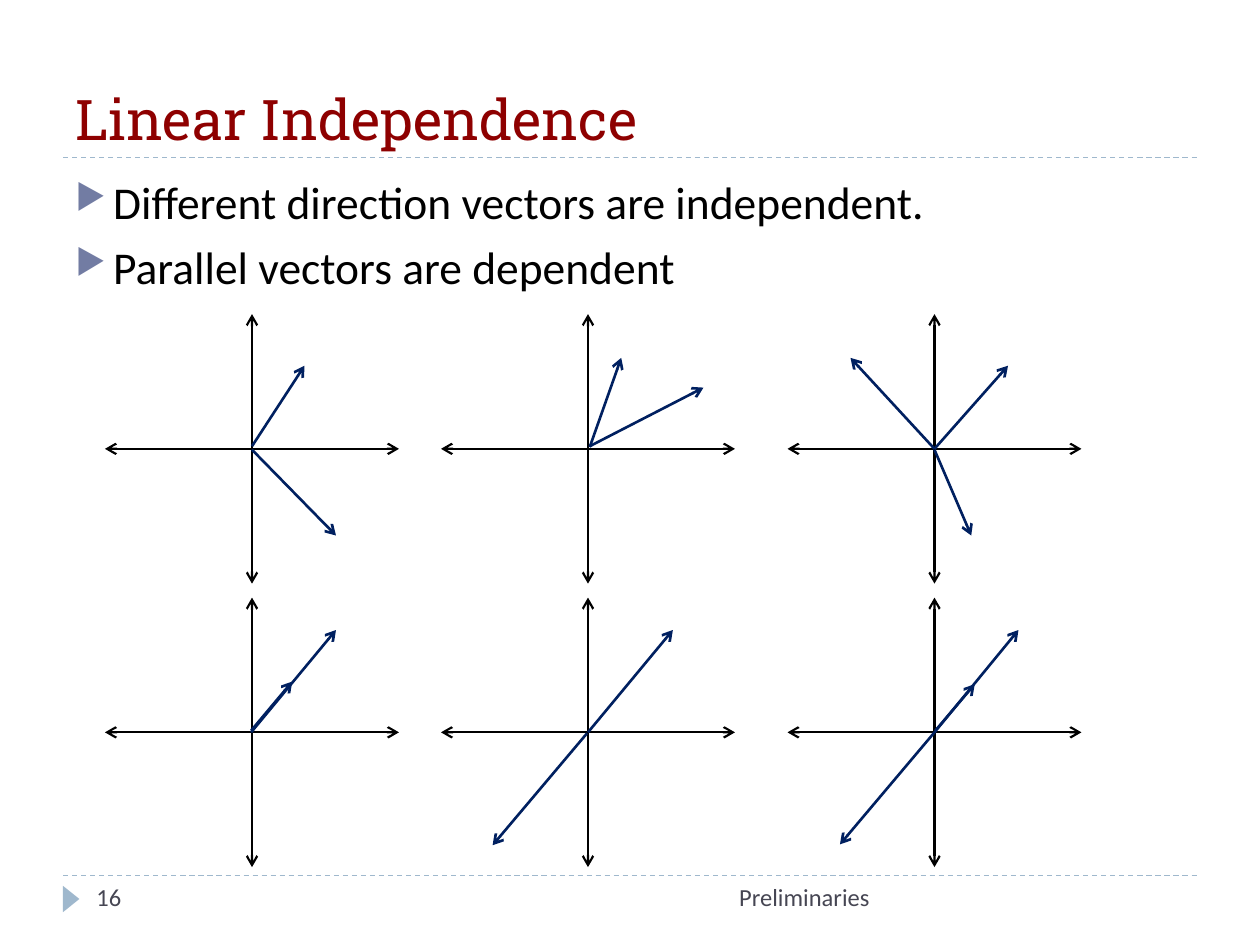
from lxml import etree
from pptx import Presentation
from pptx.dml.color import RGBColor
from pptx.enum.dml import MSO_LINE
from pptx.enum.shapes import MSO_CONNECTOR, MSO_SHAPE
from pptx.enum.text import MSO_ANCHOR, PP_ALIGN
from pptx.oxml.ns import qn
from pptx.util import Pt

STRAIGHT = MSO_CONNECTOR.STRAIGHT
TRIANGLE = MSO_SHAPE.ISOSCELES_TRIANGLE
DASH = MSO_LINE.DASH
TOP, BOTTOM = MSO_ANCHOR.TOP, MSO_ANCHOR.BOTTOM
LEFT, RIGHT = PP_ALIGN.LEFT, PP_ALIGN.RIGHT

# Content
TITLE = "Linear Independence"
POINTS = [
    "Different direction vectors are independent.",
    "Parallel vectors are dependent",
]
FOOTER = "Preliminaries"
PAGE_NUMBER = "16"

# Vectors per plot, as (start, end) offsets from the plot's origin
INDEPENDENT = [
    [((0, -1.5), (30, -47.5)), ((0, 0.5), (48, 49.5))],
    [((1, -1), (19, -52)), ((1, -1.5), (66, -35))],
    [((0, 0), (-48, -52)), ((0, 0), (42, -47.5)), ((0, 0.5), (21, 49.5))],
]
DEPENDENT = [
    [((-0.5, -1), (23, -29)), ((-0.5, 0), (48, -58.5))],
    [((0, 0), (48.5, -58.5)), ((-0.5, 0.5), (-54.5, 64.5))],
    [((0, 0), (48, -58.5)), ((0, 0), (-54, 64)), ((0.5, -1), (23, -27.5))],
]

THEME = {
    "title": ("Roboto Slab", 32, "8E0000"),
    "body": ("Calibri", 26, "000000"),
    "footer": ("Calibri", 14, "464653"),
    "rule": ("9FB8CD", 0.75),
    "axis": ("000000", 1.25),
    "vector": ("002060", 1.5),
    "marker": "9FB8CD",
    "bullet": "727CA3",
}

# Layout
MARGIN, CONTENT_WIDTH = 36, 648
RULE_TOPS = (500.4, 90)
ORIGIN_XS = (144, 336, 534)
PLOT_ROWS = ((256.5, INDEPENDENT), (418.5, DEPENDENT))
AXIS_X, AXIS_Y = 84, 77
INDENT = 21.6


def add_line(shapes, start, end, style, heads=()):
    line = shapes.add_connector(STRAIGHT, *(Pt(v) for v in (*start, *end)))
    color, width = style
    line.line.color.rgb = RGBColor.from_string(color)
    line.line.width = Pt(width)
    for head in heads:
        etree.SubElement(line.line._get_or_add_ln(), qn(f"a:{head}"), type="arrow")
    etree.SubElement(line._element.spPr, qn("a:effectLst"))
    return line


def add_text(shapes, box, lines, style, anchor=TOP, align=LEFT):
    frame = shapes.add_textbox(*(Pt(v) for v in box)).text_frame
    frame.word_wrap = True
    frame.vertical_anchor = anchor
    font, size, color = style
    for i, text in enumerate(lines):
        paragraph = frame.paragraphs[0] if i == 0 else frame.add_paragraph()
        paragraph.alignment = align
        run = paragraph.add_run()
        run.text = text
        run.font.name = font
        run.font.size = Pt(size)
        run.font.color.rgb = RGBColor.from_string(color)
    return frame


def add_bullet(paragraph):
    paragraph.space_before = Pt(6)
    props = paragraph._p.get_or_add_pPr()
    props.set("marL", str(Pt(INDENT)))
    props.set("indent", str(-Pt(INDENT)))
    color = etree.SubElement(props, qn("a:buClr"))
    etree.SubElement(color, qn("a:srgbClr"), val=THEME["bullet"])
    etree.SubElement(props, qn("a:buSzPct"), val="76000")
    etree.SubElement(props, qn("a:buChar"), char="▶")


def add_plot_row(shapes, y, plots):
    row = shapes.add_group_shape().shapes
    for x in ORIGIN_XS:
        for dx, dy in ((AXIS_X, 0), (0, AXIS_Y)):
            add_line(row, (x - dx, y - dy), (x + dx, y + dy),
                     THEME["axis"], ("headEnd", "tailEnd"))
    for x, vectors in zip(ORIGIN_XS, plots):
        for (x1, y1), (x2, y2) in vectors:
            add_line(row, (x + x1, y + y1), (x + x2, y + y2),
                     THEME["vector"], ("tailEnd",))


def main():
    deck = Presentation()
    deck.slide_width, deck.slide_height = Pt(720), Pt(540)
    shapes = deck.slides.add_slide(deck.slide_layouts[6]).shapes

    # Dashed rules and page marker
    for y in RULE_TOPS:
        rule = add_line(shapes, (MARGIN, y), (MARGIN + CONTENT_WIDTH, y), THEME["rule"])
        rule.line.dash_style = DASH
    marker = shapes.add_shape(TRIANGLE, Pt(33.1), Pt(509), Pt(15.1), Pt(9.4))
    marker.rotation = 90
    marker.shadow.inherit = False
    marker.fill.solid()
    marker.fill.fore_color.rgb = RGBColor.from_string(THEME["marker"])
    marker.line.fill.background()

    # Title, footer and bullet points
    add_text(shapes, (MARGIN, 12, CONTENT_WIDTH, 78), [TITLE], THEME["title"], BOTTOM)
    add_text(shapes, (228, 500.4, 276, 28.8), [FOOTER], THEME["footer"], align=RIGHT)
    add_text(shapes, (48, 500.4, 156, 28.8), [PAGE_NUMBER], THEME["footer"])
    body = add_text(shapes, (MARGIN, 96, CONTENT_WIDTH, 90), POINTS, THEME["body"])
    for paragraph in body.paragraphs:
        add_bullet(paragraph)

    # Vector plots
    for y, plots in PLOT_ROWS:
        add_plot_row(shapes, y, plots)

    deck.save("out.pptx")


if __name__ == "__main__":
    main()
